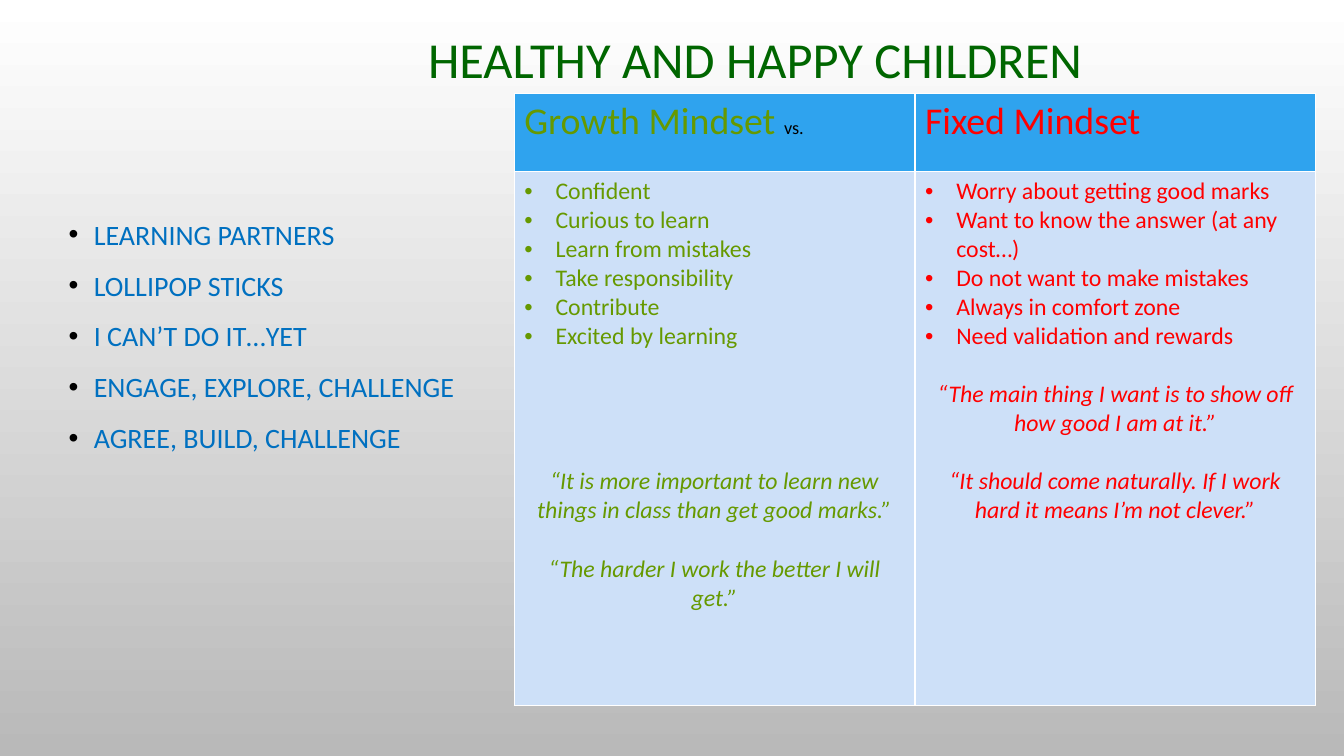
"""Build the growth and fixed mindset slide."""
from dataclasses import dataclass

from lxml import etree
from pptx import Presentation
from pptx.dml import color as c
from pptx.enum import text as t
from pptx.oxml import ns
from pptx.util import Inches, Pt


@dataclass(frozen=True)
class Theme:
    """Colours, type sizes and the font of the slide."""
    font: str = "Calibri"
    title: str = "006600"
    list: str = "0070C0"
    good: str = "669900"
    bad: str = "FF0000"
    black: str = "000000"
    white: str = "FFFFFF"
    grey: str = "B9B9B9"
    head: str = "2FA3EE"
    cell: str = "CDE0F8"
    big: float = 36
    mid: float = 27
    list_size: float = 20
    small: float = 17
    tiny: float = 13
    line: float = 20.75


THEME = Theme()

TOOLS = ["LEARNING PARTNERS", "LOLLIPOP STICKS", "I CAN’T DO IT…YET",
         "ENGAGE, EXPLORE, CHALLENGE", "AGREE, BUILD, CHALLENGE"]

GROWTH = {
    "head": "Growth Mindset ", "tail": "vs.", "hue": THEME.good,
    "traits": ["Confident", "Curious to learn", "Learn from mistakes",
               "Take responsibility", "Contribute", "Excited by learning"],
    "quotes": [
        (4, "“It is more important to learn new things in class than get good marks.”"),
        (1, "“The harder I work the better I will get.”")],
}
FIXED = {
    "head": "Fixed Mindset", "tail": "", "hue": THEME.bad,
    "traits": ["Worry about getting good marks",
               "Want to know the answer (at any cost…)",
               "Do not want to make mistakes", "Always in comfort zone",
               "Need validation and rewards"],
    "quotes": [
        (1, "“The main thing I want is to show off how good I am at it.”"),
        (1, "“It should come naturally. If I work hard it means I’m not clever.”")],
}


def rgb(hue):
    """Turn a hex string into a colour."""
    return c.RGBColor.from_string(hue)


def add_run(para, words, size, hue, italic=False):
    """Add one formatted run to a paragraph."""
    run = para.add_run()
    run.text = words
    font = run.font
    font.name, font.size = THEME.font, Pt(size)
    font.bold, font.italic = False, italic
    font.color.rgb = rgb(hue)


def next_para(frame):
    """Give the empty first paragraph, or else a new one."""
    first = frame.paragraphs[0]
    return frame.add_paragraph() if first.runs else first


def add_bullet(para, indent, hue):
    """Give a paragraph a hanging round bullet."""
    props = para._p.get_or_add_pPr()
    props.set("marL", str(Inches(indent)))
    props.set("indent", str(-Inches(indent)))
    tint = etree.SubElement(props, ns.qn("a:buClr"))
    etree.SubElement(tint, ns.qn("a:srgbClr"), val=hue)
    etree.SubElement(props, ns.qn("a:buFont"), typeface="Arial")
    etree.SubElement(props, ns.qn("a:buChar"), char="•")


def place(shape, box):
    """Move a placeholder to a box and set its text to the top."""
    shape.left, shape.top, shape.width, shape.height = map(Inches, box)
    frame = shape.text_frame
    frame.word_wrap = True
    frame.auto_size = t.MSO_AUTO_SIZE.NONE
    frame.vertical_anchor = t.MSO_ANCHOR.TOP
    return frame


def add_title(slide, box):
    """Fill the title."""
    para = place(slide.shapes.title, box).paragraphs[0]
    para.alignment = t.PP_ALIGN.CENTER
    para.line_spacing = 0.9
    add_run(para, "HEALTHY AND HAPPY CHILDREN", THEME.big, THEME.title)


def add_list(slide, box):
    """Fill the list of classroom tools."""
    frame = place(slide.placeholders[1], box)
    for i, tool in enumerate(TOOLS):
        para = next_para(frame)
        add_bullet(para, 0.25, THEME.black)
        para.line_spacing = 1.1
        para.space_before = Pt(10 if i else 0)
        add_run(para, tool, THEME.list_size, THEME.list)


def style_cell(cell, fill):
    """Give a cell its thin white borders and its fill."""
    props = cell._tc.get_or_add_tcPr()
    for side in ("lnL", "lnR", "lnT", "lnB"):
        line = etree.SubElement(props, ns.qn(f"a:{side}"), w=str(Pt(1)))
        solid = etree.SubElement(line, ns.qn("a:solidFill"))
        etree.SubElement(solid, ns.qn("a:srgbClr"), val=THEME.white)
    cell.fill.solid()
    cell.fill.fore_color.rgb = rgb(fill)


def fill_column(head, body, mind):
    """Write the heading, traits and quotes of one mindset."""
    style_cell(head, THEME.head)
    style_cell(body, THEME.cell)
    para = head.text_frame.paragraphs[0]
    add_run(para, mind["head"], THEME.mid, mind["hue"])
    if mind["tail"]:
        add_run(para, mind["tail"], THEME.tiny, THEME.black)
    for trait in mind["traits"]:
        para = next_para(body.text_frame)
        add_bullet(para, 0.31, mind["hue"])
        add_run(para, trait, THEME.small, mind["hue"])
    for gap, quote in mind["quotes"]:
        para = next_para(body.text_frame)
        para.alignment = t.PP_ALIGN.CENTER
        para.space_before = Pt(gap * THEME.line)
        add_run(para, quote, THEME.small, mind["hue"], italic=True)


def add_minds(slide, box):
    """Add the table that compares the two mindsets."""
    minds = (GROWTH, FIXED)
    table = slide.shapes.add_table(2, len(minds), *map(Inches, box)).table
    table.first_row = table.horz_banding = False
    top = 0.77
    for row, height in zip(table.rows, (top, box[3] - top)):
        row.height = Inches(height)
    for i, mind in enumerate(minds):
        table.columns[i].width = Inches(box[2] / len(minds))
        fill_column(table.cell(0, i), table.cell(1, i), mind)


def add_back(slide):
    """Shade the background from white down to grey."""
    fill = slide.background.fill
    fill.gradient()
    fill.gradient_angle = 270
    for stop, hue in zip(fill.gradient_stops, (THEME.white, THEME.grey)):
        stop.color.rgb = rgb(hue)


def main():
    """Build and save the slide."""
    deck = Presentation()
    deck.slide_width, deck.slide_height = Inches(13.33), Inches(7.5)
    slide = deck.slides.add_slide(deck.slide_layouts[1])
    add_back(slide)
    add_title(slide, (2.99, 0.3, 9, 1.25))
    add_list(slide, (0.58, 2.07, 4.28, 3.37))
    add_minds(slide, (5.1, 0.93, 7.95, 6.07))
    deck.save("out.pptx")


if __name__ == "__main__":
    main()
